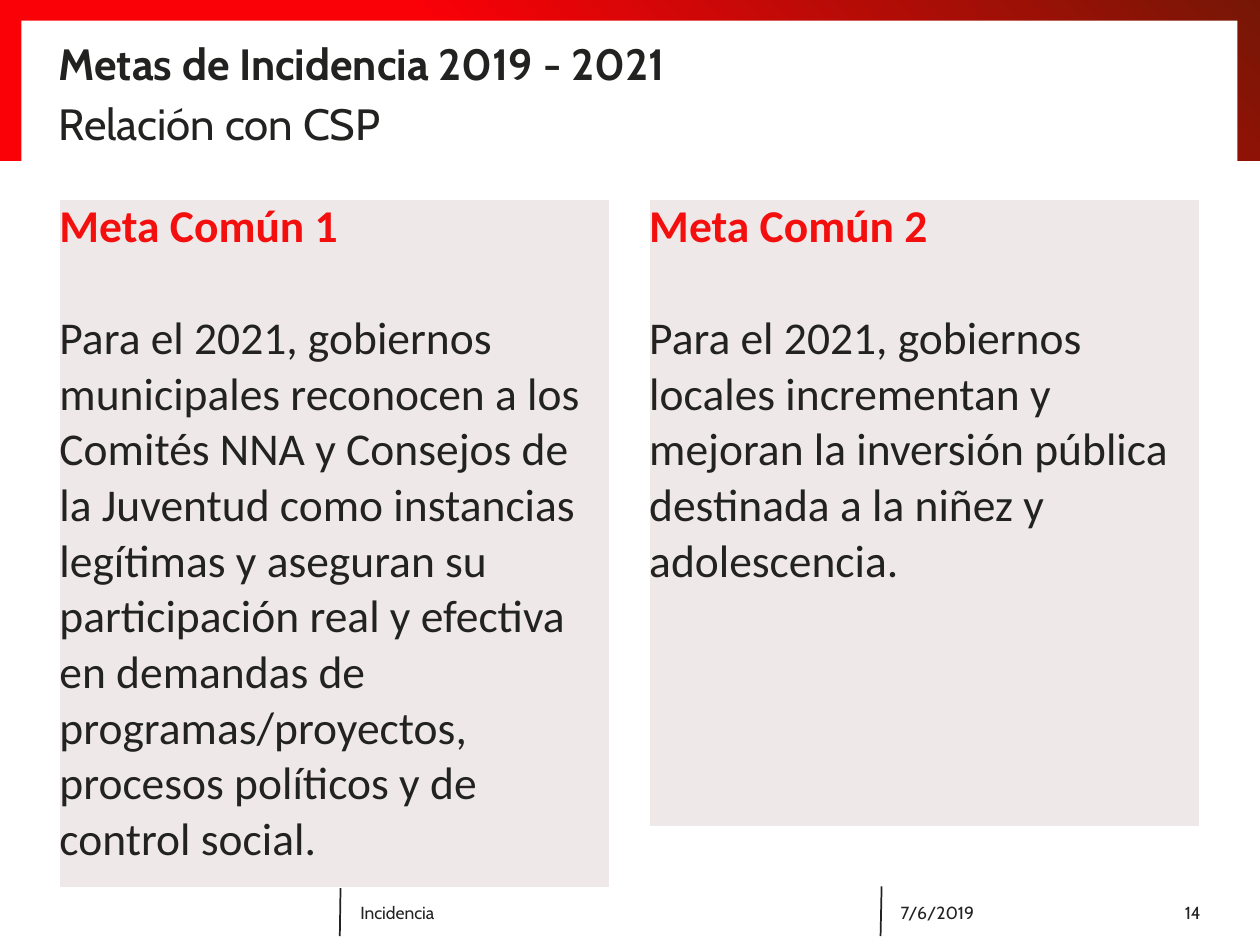
from lxml.etree import SubElement
from pptx import Presentation
from pptx.dml.color import RGBColor
from pptx.enum.shapes import MSO_CONNECTOR, MSO_SHAPE
from pptx.enum.text import MSO_ANCHOR, MSO_AUTO_SIZE, PP_ALIGN
from pptx.oxml import parse_xml
from pptx.oxml.ns import nsdecls, qn
from pptx.util import Pt

COLORS = {
    "red": "FA0007",
    "maroon": "761706",
    "white": "FFFFFF",
    "text": "222221",
    "heading": "F20F0E",
    "panel": "EFE8E8",
}


def color(name):
    return RGBColor.from_string(COLORS[name])


def add_text(paragraph, text, font, size, color_name="text", bold=False):
    run = paragraph.add_run()
    run.text = text
    run.font.name = font
    run.font.size = Pt(size)
    run.font.bold = bold
    run.font.color.rgb = color(color_name)


presentation = Presentation()
presentation.slide_width, presentation.slide_height = Pt(720), Pt(540)
slide = presentation.slides.add_slide(presentation.slide_layouts[1])
shapes = slide.shapes

band = shapes.add_shape(MSO_SHAPE.RECTANGLE, Pt(0), Pt(0), Pt(720), Pt(92))
band.fill.gradient()
band.fill.gradient_angle = 45
for stop, name, position in zip(band.fill.gradient_stops, ("red", "maroon"), (0.4, 1)):
    stop.color.rgb = color(name)
    stop.position = position

header = shapes.add_shape(MSO_SHAPE.RECTANGLE, Pt(12.2), Pt(11.8), Pt(695), Pt(85))
header.fill.solid()
header.fill.fore_color.rgb = color("white")

for shape in (band, header):
    shape.line.fill.background()
    shape.shadow.inherit = False

for top_x, bottom_x in ((194.6, 194.2), (503.8, 503.2)):
    divider = shapes.add_connector(
        MSO_CONNECTOR.STRAIGHT, Pt(top_x), Pt(506.5), Pt(bottom_x), Pt(535))
    divider.line.color.rgb = color("text")
    divider.line.width = Pt(1)
    SubElement(divider._element.spPr, qn("a:effectLst"))

goals = (
    (34, 393, "Meta Común 1",
     "Para el 2021, gobiernos municipales reconocen a los Comités NNA y Consejos "
     "de la Juventud como instancias legítimas y aseguran su participación real y "
     "efectiva en demandas de programas/proyectos, procesos políticos y de control social."),
    (371, 358.5, "Meta Común 2",
     "Para el 2021, gobiernos locales incrementan y mejoran la inversión pública "
     "destinada a la niñez y adolescencia."),
)
for left, height, heading, goal in goals:
    table = shapes.add_table(1, 1, Pt(left), Pt(114), Pt(314.5), Pt(height)).table
    table.first_row = table.horz_banding = False
    cell = table.cell(0, 0)
    cell.margin_left = cell.margin_right = cell.margin_top = cell.margin_bottom = 0
    cell.fill.solid()
    cell.fill.fore_color.rgb = color("panel")
    properties = cell._tc.get_or_add_tcPr()
    for index, side in enumerate(("lnL", "lnR", "lnT", "lnB")):
        properties.insert(index, parse_xml(
            f'<a:{side} {nsdecls("a")} w="12700"><a:solidFill>'
            f'<a:srgbClr val="{COLORS["white"]}"/></a:solidFill></a:{side}>'))
    add_text(cell.text_frame.paragraphs[0], heading, "Calibri", 26, "heading", True)
    paragraph = cell.text_frame.add_paragraph()
    paragraph.space_before = Pt(32)
    add_text(paragraph, goal, "Calibri", 26)

footers = (
    (198.8, 301, "Incidencia", PP_ALIGN.LEFT),
    (507.6, 124.6, "7/6/2019", PP_ALIGN.LEFT),
    (632.2, 61, "14", PP_ALIGN.RIGHT),
)
for left, width, text, alignment in footers:
    footer = shapes.add_textbox(Pt(left), Pt(507), Pt(width), Pt(29))
    footer.text_frame.word_wrap = True
    footer.text_frame.vertical_anchor = MSO_ANCHOR.MIDDLE
    paragraph = footer.text_frame.paragraphs[0]
    paragraph.alignment = alignment
    add_text(paragraph, text, "Cabin", 10)

title, subtitle = shapes.title, slide.placeholders[1]
headings = (
    (title, 16, 39.6, "Metas de Incidencia 2019 - 2021", True, MSO_ANCHOR.MIDDLE),
    (subtitle, 55.4, 29, "Relación con CSP", False, MSO_ANCHOR.TOP),
)
for placeholder, top, height, text, bold, anchor in headings:
    placeholder.left, placeholder.top = Pt(33.5), Pt(top)
    placeholder.width, placeholder.height = Pt(652), Pt(height)
    frame = placeholder.text_frame
    frame.margin_left = frame.margin_right = frame.margin_top = frame.margin_bottom = 0
    frame.auto_size = MSO_AUTO_SIZE.NONE
    frame.vertical_anchor = anchor
    paragraph = frame.paragraphs[0]
    paragraph.alignment = PP_ALIGN.LEFT
    paragraph_properties = paragraph._p.get_or_add_pPr()
    paragraph_properties.set("marL", "0")
    paragraph_properties.set("indent", "0")
    SubElement(paragraph_properties, qn("a:buNone"))
    paragraph.space_before = Pt(0)
    add_text(paragraph, text, "Cabin", 25, bold=bold)
    placeholder._element.getparent().append(placeholder._element)

presentation.save("out.pptx")
